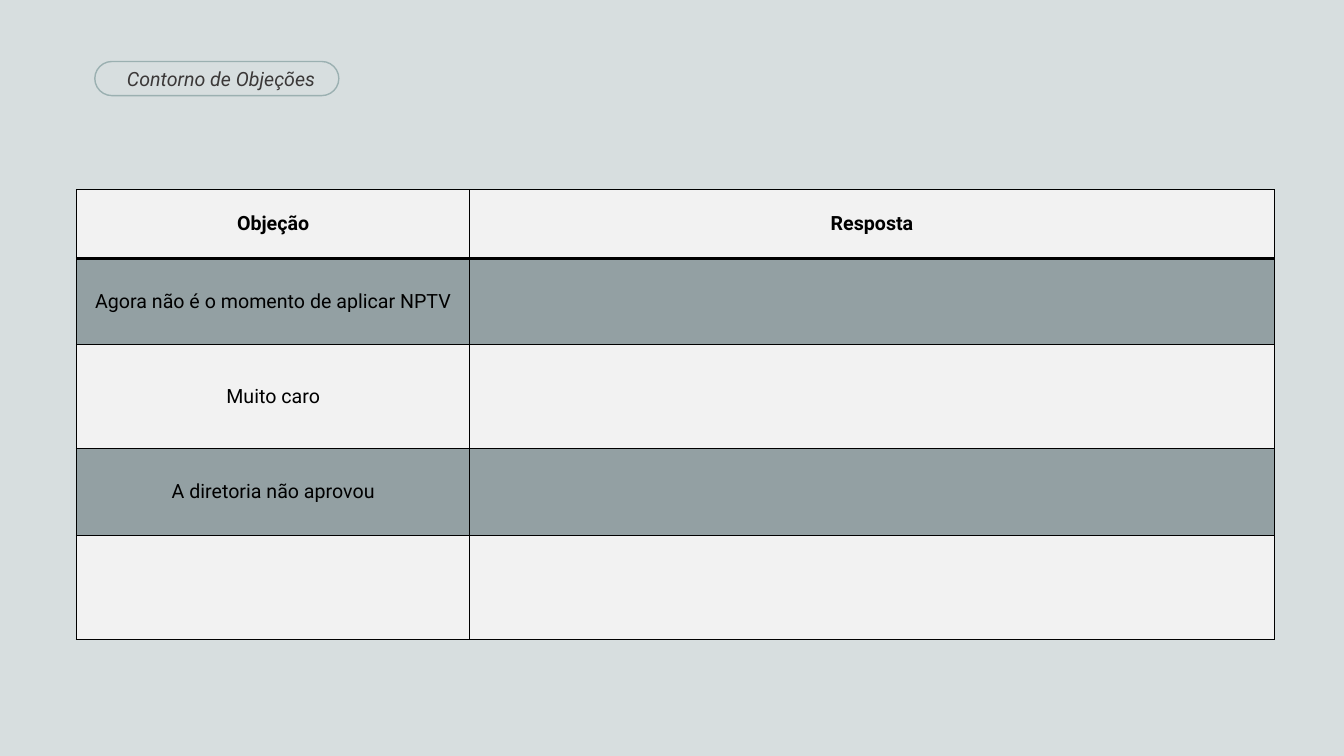
from lxml.etree import SubElement
from pptx import Presentation
from pptx.dml.color import RGBColor
from pptx.enum.shapes import MSO_SHAPE as Preset
from pptx.enum.text import MSO_ANCHOR as Anchor, MSO_AUTO_SIZE as AutoSize, PP_ALIGN as Align
from pptx.oxml.ns import qn
from pptx.util import Cm, Pt

MIST = RGBColor(0xD7, 0xDE, 0xDF)
SAGE = RGBColor(0x9B, 0xB0, 0xB1)
SLATE = RGBColor(0x93, 0xA0, 0xA3)
PALE = RGBColor(0xF2, 0xF2, 0xF2)
CHARCOAL = RGBColor(0x3B, 0x38, 0x38)
BLACK = RGBColor(0, 0, 0)

SLIDE_WIDTH, SLIDE_HEIGHT = Cm(33.87), Cm(19.05)
COLUMN_WIDTHS = (9.91, 20.27)
ROW_HEIGHTS = (1.73, 2.18, 2.62, 2.18, 2.62)
OBJECTIONS = (
    ("Objeção", "Resposta"),
    ("Agora não é o momento de aplicar NPTV", ""),
    ("Muito caro", ""),
    ("A diretoria não aprovou", ""),
    ("", ""),
)


def write(paragraph, text, color, **formats):
    run = paragraph.add_run()
    run.text = text
    run.font.color.rgb = color
    for name, value in {"name": "Roboto", "size": Pt(14), **formats}.items():
        setattr(run.font, name, value)


def add_panel(slide, preset, left, top, width, height, fill=None, line=None):
    panel = slide.shapes.add_shape(preset, left, top, width, height)
    panel.shadow.inherit = False
    if fill is None:
        panel.fill.background()
    else:
        panel.fill.solid()
        panel.fill.fore_color.rgb = fill
    if line is None:
        panel.line.fill.background()
    else:
        panel.line.color.rgb = line
        panel.line.width = Pt(1)
    return panel


def add_title(slide, text):
    # Pill outline behind the title
    pill = add_panel(slide, Preset.ROUNDED_RECTANGLE, Cm(2.39), Cm(1.55),
                     Cm(6.15), Cm(0.86), line=SAGE)
    pill.adjustments[0] = 0.5
    title = slide.shapes.add_textbox(Cm(2.95), Cm(1.55), Cm(12.27), Cm(0.86))
    frame = title.text_frame
    frame.word_wrap = True
    frame.auto_size = AutoSize.SHAPE_TO_FIT_TEXT
    write(frame.paragraphs[0], text, CHARCOAL, italic=True)


def set_borders(cell, widths):
    properties = cell._tc.get_or_add_tcPr()
    for side, width in widths.items():
        border = SubElement(properties, qn(f"a:ln{side}"), w=str(Pt(width)))
        fill = SubElement(border, qn("a:solidFill"))
        SubElement(fill, qn("a:srgbClr"), val=str(BLACK))


def add_objection_table(slide):
    table = slide.shapes.add_table(
        len(ROW_HEIGHTS), len(COLUMN_WIDTHS), Cm(1.93), Cm(4.78),
        Cm(sum(COLUMN_WIDTHS)), Cm(sum(ROW_HEIGHTS))).table
    for column, width in zip(table.columns, COLUMN_WIDTHS):
        column.width = Cm(width)
    for index, (row, height, texts) in enumerate(zip(table.rows, ROW_HEIGHTS, OBJECTIONS)):
        row.height = Cm(height)
        for cell, text in zip(row.cells, texts):
            # The rule under the header is heavier
            set_borders(cell, {"L": 1, "R": 1, "T": 2 if index == 1 else 1,
                               "B": 2 if index == 0 else 1})
            cell.fill.solid()
            cell.fill.fore_color.rgb = SLATE if index % 2 else PALE
            cell.vertical_anchor = Anchor.MIDDLE
            if text:
                paragraph = cell.text_frame.paragraphs[0]
                paragraph.alignment = Align.CENTER
                write(paragraph, text, BLACK, bold=index == 0)


def main():
    deck = Presentation()
    deck.slide_width, deck.slide_height = SLIDE_WIDTH, SLIDE_HEIGHT
    slide = deck.slides.add_slide(deck.slide_layouts[6])
    # Backdrop
    add_panel(slide, Preset.RECTANGLE, 0, 0, SLIDE_WIDTH, SLIDE_HEIGHT, fill=MIST)
    # Content
    add_title(slide, "Contorno de Objeções")
    add_objection_table(slide)
    deck.save("out.pptx")


if __name__ == "__main__":
    main()
